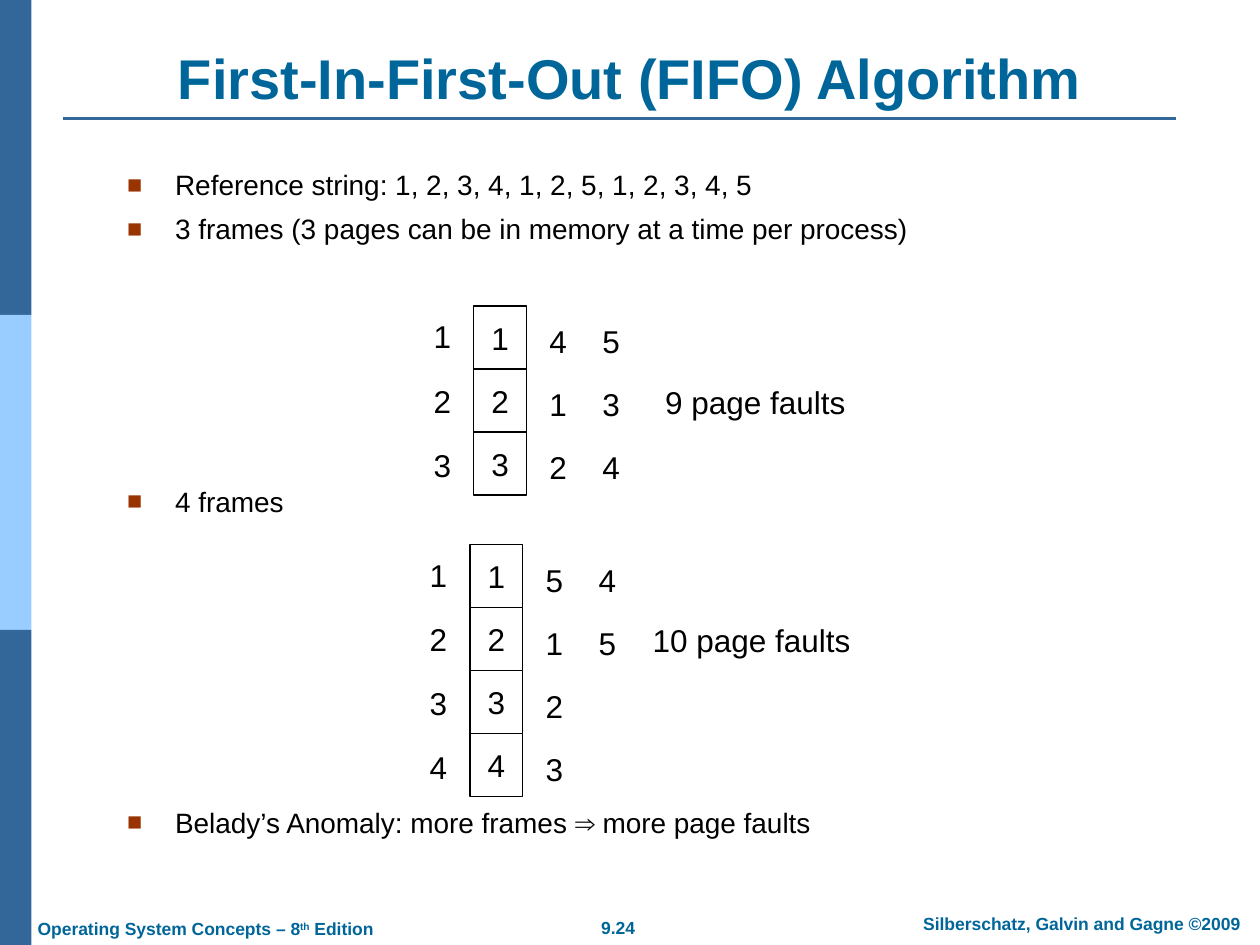
import dataclasses

import pptx
import pptx.dml.color
import pptx.enum.shapes
import pptx.enum.text
import pptx.oxml
import pptx.oxml.ns
import pptx.util

COLUMNS, ROWS = 100, 75
UNIT = pptx.util.Inches(0.1)
ALIGN = pptx.enum.text.PP_ALIGN
ANCHOR = pptx.enum.text.MSO_ANCHOR
RECTANGLE = pptx.enum.shapes.MSO_SHAPE.RECTANGLE


@dataclasses.dataclass(frozen=True)
class Theme:
    font: str = "Arial"
    heading: str = "006699"
    bar: str = "336699"
    bar_light: str = "99CCFF"
    bullet: str = "993300"
    ink: str = "000000"
    paper: str = "FFFFFF"
    title_size: int = 32
    body_size: int = 16
    figure_size: int = 18
    footer_size: int = 10


@dataclasses.dataclass(frozen=True)
class Box:
    left: float
    top: float
    width: float
    height: float

    def inner(self, left, top, width, height):
        return Box(self.left + left, self.top + top, width, height)

    def lengths(self):
        return [round(value * UNIT) for value in dataclasses.astuple(self)]


THEME = Theme()


def color(value):
    return pptx.dml.color.RGBColor.from_string(value)


def apply(target, values):
    for name, value in values.items():
        setattr(target, name, value)


def move(shape, box):
    apply(shape, dict(zip(("left", "top", "width", "height"), box.lengths())))


def format_font(font, size, ink, bold=False):
    apply(font, {"name": THEME.font, "size": pptx.util.Pt(size), "bold": bold})
    font.color.rgb = color(ink)


def write(shape, text, size, ink, bold=False, align=ALIGN.CENTER, anchor=ANCHOR.TOP, wrap=False):
    apply(shape.text_frame, {"word_wrap": wrap, "vertical_anchor": anchor})
    paragraph = shape.text_frame.paragraphs[0]
    paragraph.text = text
    paragraph.alignment = align
    format_font(paragraph.font, size, ink, bold)
    return paragraph


def add_text(slide, box, text, size, ink, **options):
    return write(slide.shapes.add_textbox(*box.lengths()), text, size, ink, **options)


def add_rectangle(slide, box, fill, line=None):
    shape = slide.shapes.add_shape(RECTANGLE, *box.lengths())
    shape.shadow.inherit = False
    shape.fill.solid()
    shape.fill.fore_color.rgb = color(fill)
    if line:
        shape.line.color.rgb = color(line)
        shape.line.width = pptx.util.Pt(0.75)
    else:
        shape.line.fill.background()
    return shape


def add_side_bar(slide, box):
    fills = (THEME.bar, THEME.bar_light, THEME.bar)
    height = box.height / len(fills)
    for row, fill in enumerate(fills):
        add_rectangle(slide, box.inner(0, row * height, box.width, height), fill)


def add_title(slide, box, text):
    title = slide.shapes.title
    move(title, box)
    write(title, text, THEME.title_size, THEME.heading, bold=True, anchor=ANCHOR.BOTTOM, wrap=True)
    left, top, width, _ = box.inner(0, 6.4, 88.3, 0).lengths()
    rule = slide.shapes.add_connector(
        pptx.enum.shapes.MSO_CONNECTOR.STRAIGHT, left, top, left + width, top)
    rule.line.color.rgb = color(THEME.bar)
    rule.line.width = pptx.util.Pt(1.5)
    properties = rule._element.spPr
    properties.append(pptx.oxml.parse_xml(f'<a:effectLst {pptx.oxml.ns.nsdecls("a")}/>'))


def add_bullet(paragraph):
    properties = paragraph._p.get_or_add_pPr()
    indent = pptx.util.Inches(0.38)
    properties.set("marL", str(indent))
    properties.set("indent", str(-indent))
    namespace = pptx.oxml.ns.nsdecls("a")
    for content in (
        f'<a:buClr {namespace}><a:srgbClr val="{THEME.bullet}"/></a:buClr>',
        f'<a:buSzPct {namespace} val="90000"/>',
        f'<a:buFont {namespace} typeface="{THEME.font}"/>',
        f'<a:buChar {namespace} char="■"/>',
    ):
        properties.append(pptx.oxml.parse_xml(content))


def add_body(slide, box, items):
    body = slide.placeholders[1]
    move(body, box)
    frame = body.text_frame
    apply(frame, {"word_wrap": True, "auto_size": pptx.enum.text.MSO_AUTO_SIZE.NONE,
                  "margin_top": pptx.util.Inches(0.07)})
    for index, (text, space) in enumerate(items):
        paragraph = frame.add_paragraph() if index else frame.paragraphs[0]
        paragraph.text = text
        add_bullet(paragraph)
        paragraph.space_before = pptx.util.Pt(space)
        format_font(paragraph.font, THEME.body_size, THEME.ink)


def add_frames(slide, box, replacements, caption, caption_left, caption_width):
    cell = 5
    style = {"size": THEME.figure_size, "ink": THEME.ink, "anchor": ANCHOR.MIDDLE}
    for row in range(round(box.height / cell)):
        number = str(row + 1)
        frame = add_rectangle(
            slide, box.inner(0, row * cell, box.width, cell), THEME.paper, THEME.ink)
        write(frame, number, **style)
        add_text(slide, box.inner(-box.width, 0.4 + row * 5.1, 3.4, 4), number, **style)
    for column, pages in enumerate(replacements):
        for row, page in enumerate(pages):
            place = box.inner(5 + column * box.width, 0.8 + row * cell, 3.4, 4)
            add_text(slide, place, page, **style)
    add_text(slide, box.inner(caption_left, 5.6, caption_width, 4), caption, **style)


def add_footer(slide, box):
    style = {"size": THEME.footer_size, "ink": THEME.heading, "bold": True}
    edition = add_text(slide, box.inner(0, 0.4, 28.8, 2.7), "Operating System Concepts – 8",
                       align=ALIGN.LEFT, **style)
    ordinal = edition.add_run()
    ordinal.text = "th"
    ordinal._r.get_or_add_rPr().set("baseline", "30000")
    edition.add_run().text = " Edition"
    add_text(slide, box.inner(44.6, 0.3, 4.9, 2.7), "9.24", **style)
    add_text(slide, box.inner(69, 0, 29.7, 2.7), "Silberschatz, Galvin and Gagne ©2009",
             wrap=True, **style)


def main():
    presentation = pptx.Presentation()
    presentation.slide_width = COLUMNS * UNIT
    presentation.slide_height = ROWS * UNIT
    slide = presentation.slides.add_slide(presentation.slide_layouts[1])
    add_side_bar(slide, Box(0, 0, 2.5, ROWS))
    add_footer(slide, Box(2, 72, 98, 3))
    add_title(slide, Box(5, 3, 90, 6.3), "First-In-First-Out (FIFO) Algorithm")
    add_body(slide, Box(9.1, 12.6, 76.9, 62.4), [
        ("Reference string: 1, 2, 3, 4, 1, 2, 5, 1, 2, 3, 4, 5", 0),
        ("3 frames (3 pages can be in memory at a time per process)", 6.2),
        ("4 frames", 136.5),
        ("Belady’s Anomaly: more frames ⇒ more page faults", 164),
    ])
    add_frames(slide, Box(37.6, 24.3, 4.2, 15), ("412", "534"), "9 page faults", 14.2, 16.3)
    add_frames(slide, Box(37.3, 43.2, 4.2, 20), ("5123", "45"), "10 page faults", 13.5, 17.7)
    presentation.save("out.pptx")


if __name__ == "__main__":
    main()
